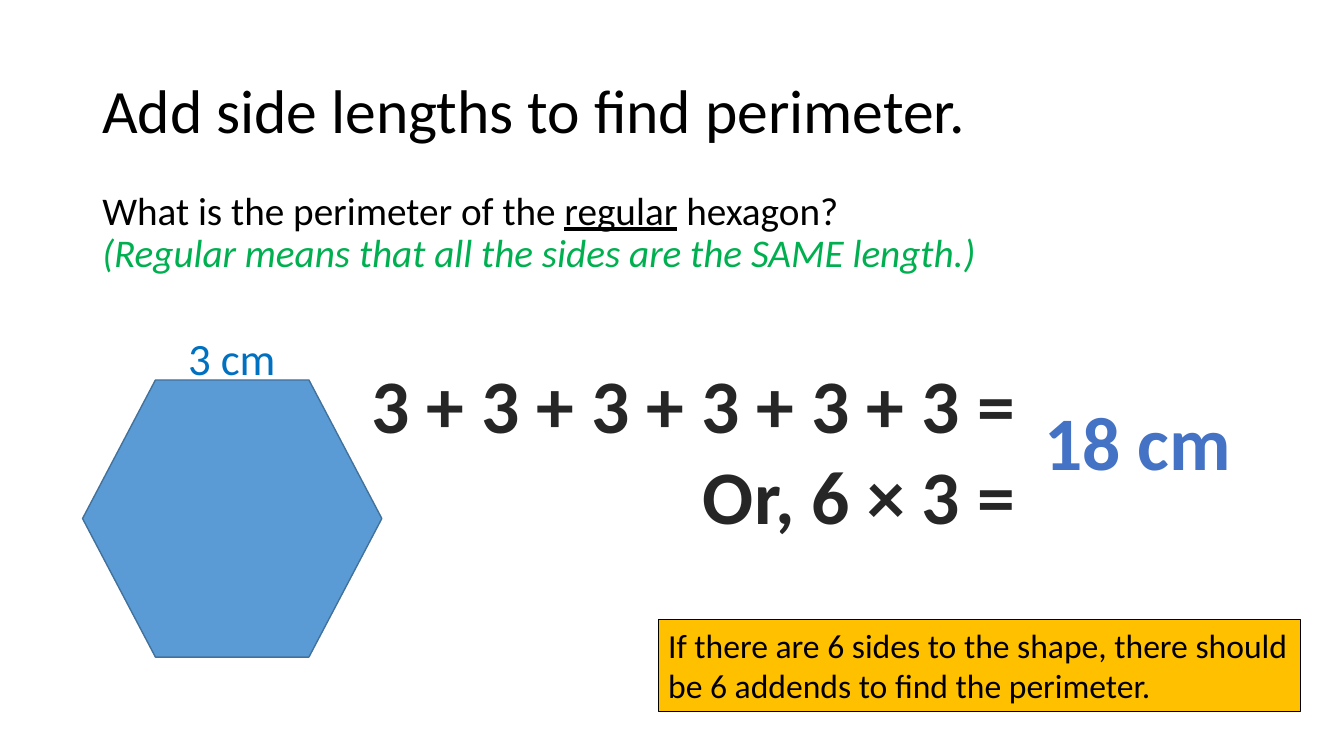
from pptx import Presentation
from pptx.dml.color import RGBColor
from pptx.enum.shapes import MSO_SHAPE as Shape
from pptx.enum.text import MSO_ANCHOR as Anchor, PP_ALIGN as Align
from pptx.util import Pt

BLACK, DARK, GREEN = "000000", "262626", "00B050"
BLUE, ANSWER_BLUE = "0070C0", "4472C4"


def color(hex_code):
    return RGBColor.from_string(hex_code)


class SlideBuilder:
    font = "Calibri"

    def __init__(self, slide):
        self.slide = slide

    def format_runs(self, p, size, hex_code, bold=False):
        for r in p.runs:
            r.font.name = self.font
            r.font.size = Pt(size)
            r.font.bold = bold
            r.font.color.rgb = color(hex_code)

    def fill_text(self, sp, lines, size, hex_code, bold=False,
                  align=Align.LEFT, anchor=Anchor.TOP, spacing=1.0):
        tf = sp.text_frame
        tf.word_wrap = True
        tf.vertical_anchor = anchor
        tf.text = lines
        for p in tf.paragraphs:
            p.alignment = align
            p.line_spacing = spacing
            self.format_runs(p, size, hex_code, bold)
        return tf

    def text(self, box, lines, size, hex_code, **style):
        sp = self.slide.shapes.add_textbox(*map(Pt, box))
        return self.fill_text(sp, lines, size, hex_code, **style)

    def shape(self, kind, box, fill, line, width):
        sp = self.slide.shapes.add_shape(kind, *map(Pt, box))
        sp.shadow.inherit = False
        sp.fill.solid()
        sp.fill.fore_color.rgb = color(fill)
        sp.line.color.rgb = color(line)
        sp.line.width = Pt(width)
        return sp

    def question(self, box, size):
        """Question with an underlined key word and a green hint below."""
        tf = self.text(box, "What is the perimeter of the ", size, BLACK, spacing=0.9)
        p = tf.paragraphs[0]
        key_word = p.add_run()
        key_word.text = "regular"
        p.add_run().text = " hexagon? "
        p.add_line_break()
        hint = p.add_run()
        hint.text = "(Regular means that all the sides are the SAME length.)"
        self.format_runs(p, size, BLACK)
        key_word.font.underline = True
        hint.font.italic = True
        hint.font.color.rgb = color(GREEN)


def main():
    prs = Presentation()
    prs.slide_width, prs.slide_height = Pt(960), Pt(540)
    page = SlideBuilder(prs.slides.add_slide(prs.slide_layouts[6]))

    page.text((66, 28.75, 828, 104.4), "Add side lengths to find perimeter.", 44, BLACK,
              anchor=Anchor.MIDDLE, spacing=0.9)
    page.question((66, 133.2, 828, 342.7), 28)
    page.text((126.7, 232.6, 77.8, 46), "3 cm", 32, BLUE, align=Align.CENTER)
    page.text((252.7, 252, 479.5, 138.2), "3 + 3 + 3 + 3 + 3 + 3 =\nOr, 6 × 3 =", 54, DARK,
              bold=True, align=Align.RIGHT)
    page.text((738, 278.6, 149, 72.7), "18 cm", 54, ANSWER_BLUE,
              bold=True, align=Align.CENTER)

    note = page.shape(Shape.RECTANGLE, (470.2, 442.8, 458.6, 65.5), "FFC000", BLACK, 0.75)
    page.fill_text(note, "If there are 6 sides to the shape, there should "
                   "be 6 addends to find the perimeter.", 24, BLACK)

    hexagon = page.shape(Shape.HEXAGON, (59, 271.4, 213.8, 198), "5B9BD5", "42719B", 1)
    hexagon.adjustments[0] = 0.263

    prs.save("out.pptx")


if __name__ == "__main__":
    main()
